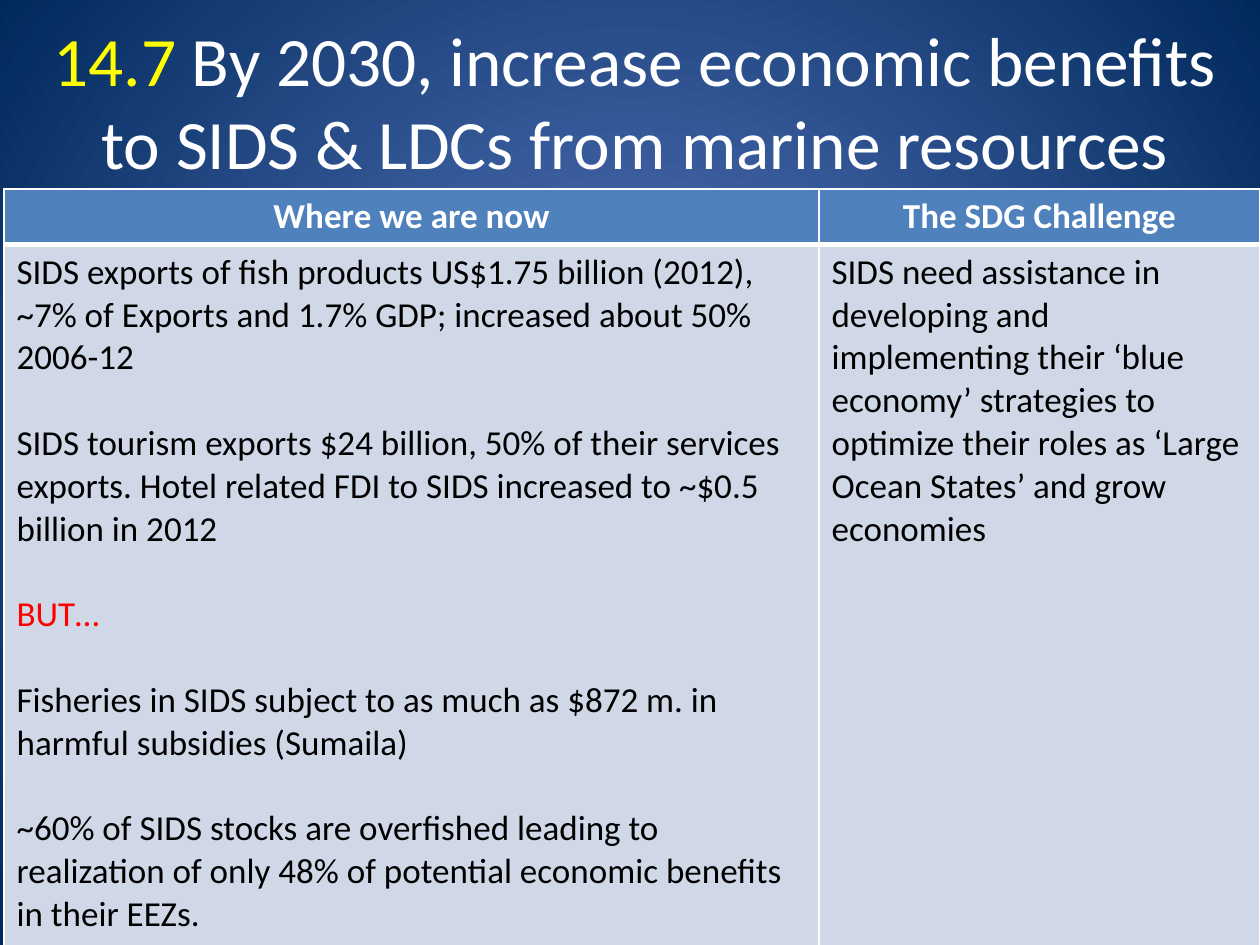
import lxml.etree
import pptx
import pptx.dml.color
import pptx.enum.text
import pptx.oxml.ns
import pptx.util

EMU_PER_PX = 914400 / 126
TITLE_ONLY = 5
ALIGN = pptx.enum.text.PP_ALIGN
WHITE, BLACK, RED, YELLOW = "FFFFFF", "000000", "FF0000", "FFFF00"
HEADER_BLUE, BODY_BLUE = "4F81BD", "D0D8E8"

HEADERS = ["Where we are now", "The SDG Challenge"]
SITUATION = [
    ("SIDS exports of fish products US$1.75 billion (2012), ~7% of Exports and 1.7% GDP; "
     "increased about 50% 2006-12", BLACK),
    ("SIDS tourism exports $24 billion, 50% of their services exports. Hotel related FDI "
     "to SIDS increased to ~$0.5 billion in 2012", BLACK),
    ("BUT…", RED),
    ("Fisheries in SIDS subject to as much as $872 m. in harmful subsidies (Sumaila)", BLACK),
    ("~60% of SIDS stocks are overfished leading to realization of only 48% of potential "
     "economic benefits in their EEZs.", BLACK),
]
CHALLENGE = [
    ("SIDS need assistance in developing and implementing their ‘blue economy’ strategies to "
     "optimize their roles as ‘Large Ocean States’ and grow economies", BLACK),
]


def px(length):
    return pptx.util.Emu(round(length * EMU_PER_PX))


def rgb(color):
    return pptx.dml.color.RGBColor.from_string(color)


def set_all(target, values):
    for name, value in values.items():
        setattr(target, name, value)


def add_xml(parent, tag, **attributes):
    return lxml.etree.SubElement(parent, pptx.oxml.ns.qn(tag), attributes)


class SlideBuilder:
    title_font = {"name": "Calibri", "size": pptx.util.Pt(39.6), "bold": False}
    header_font = {"name": "Calibri", "size": pptx.util.Pt(20), "bold": True}
    body_font = {"name": "Calibri", "size": pptx.util.Pt(20), "bold": False}
    paragraph_gap = pptx.util.Pt(24.4)

    def __init__(self, slide):
        self.slide = slide

    def radial_background(self, center, edge):
        fill = self.slide.background.fill
        fill.gradient()
        for stop, color, position in zip(fill.gradient_stops, (center, edge), (0, 1)):
            stop.color.rgb = rgb(color)
            stop.position = position
        gradient = next(self.slide.element.iter(pptx.oxml.ns.qn("a:gradFill")))
        gradient.remove(gradient.find(pptx.oxml.ns.qn("a:lin")))
        circle = add_xml(gradient, "a:path", path="circle")
        add_xml(circle, "a:fillToRect", **dict.fromkeys("ltrb", "50000"))

    def span(self, para, text, color, font):
        span = para.add_run()
        span.text = text
        set_all(span.font, font)
        span.font.color.rgb = rgb(color)

    def title(self, left, top, width, height, spans):
        box = self.slide.shapes.title
        set_all(box, {"left": px(left), "top": px(top), "width": px(width), "height": px(height)})
        set_all(box.text_frame, {
            "word_wrap": True,
            "auto_size": pptx.enum.text.MSO_AUTO_SIZE.NONE,
            "vertical_anchor": pptx.enum.text.MSO_ANCHOR.MIDDLE,
        })
        para = box.text_frame.paragraphs[0]
        para.alignment = ALIGN.CENTER
        for text, color in spans:
            self.span(para, text, color, self.title_font)

    def borders(self, cell, **points):
        """Draw white borders; points maps the sides L, R, T and B to widths."""
        properties = cell._tc.get_or_add_tcPr()
        for side, width in points.items():
            line = add_xml(properties, f"a:ln{side}", w=str(pptx.util.Pt(width)))
            add_xml(add_xml(line, "a:solidFill"), "a:srgbClr", val=WHITE)

    def cell(self, cell, paragraphs, font, align, fill, top, bottom):
        self.borders(cell, L=1, R=1, T=top, B=bottom)
        cell.fill.solid()
        cell.fill.fore_color.rgb = rgb(fill)
        frame = cell.text_frame
        for index, (text, color) in enumerate(paragraphs):
            para = frame.add_paragraph() if index else frame.paragraphs[0]
            para.alignment = align
            if index:
                para.space_before = self.paragraph_gap
            self.span(para, text, color, font)

    def table(self, left, top, widths, heights, headers, bodies):
        table = self.slide.shapes.add_table(
            len(heights), len(widths), px(left), px(top), px(sum(widths)), px(sum(heights))).table
        for row, height in zip(table.rows, heights):
            row.height = px(height)
        for index, (width, header, body) in enumerate(zip(widths, headers, bodies)):
            table.columns[index].width = px(width)
            self.cell(table.cell(0, index), [(header, WHITE)], self.header_font,
                      ALIGN.CENTER, HEADER_BLUE, top=1, bottom=3)
            self.cell(table.cell(1, index), body, self.body_font,
                      ALIGN.LEFT, BODY_BLUE, top=3, bottom=1)


def main():
    deck = pptx.Presentation()
    set_all(deck, {"slide_width": px(1260), "slide_height": px(945)})
    page = SlideBuilder(deck.slides.add_slide(deck.slide_layouts[TITLE_ONLY]))
    page.radial_background("5E7CC5", "00295C")
    page.title(10, 21, 1250, 158, [
        ("14.7", YELLOW),
        (" By 2030, increase economic benefits to SIDS & LDCs from marine resources", WHITE),
    ])
    page.table(4, 189, [815, 441], [55, 701], HEADERS, [SITUATION, CHALLENGE])
    deck.save("out.pptx")


if __name__ == "__main__":
    main()
